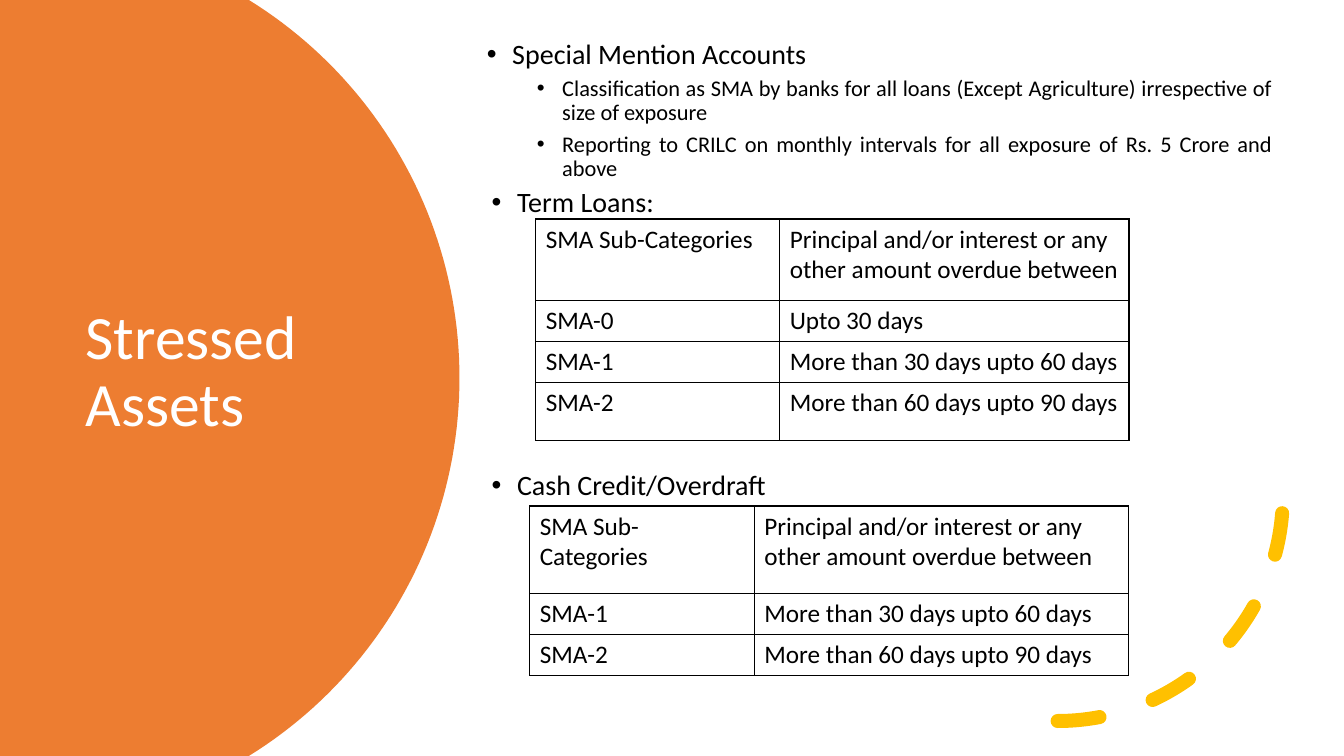
import math

import lxml.etree
import pptx
import pptx.dml.color
import pptx.enum.dml
import pptx.enum.shapes
import pptx.enum.text
import pptx.oxml.ns
import pptx.util

Cm, Pt, qn = pptx.util.Cm, pptx.util.Pt, pptx.oxml.ns.qn

COLOURS = {"orange": "ED7D31", "gold": "FFC000", "black": "000000", "white": "FFFFFF"}
WIDTH, HEIGHT = 33.87, 19.05


def colour(name):
    return pptx.dml.color.RGBColor.from_string(COLOURS[name])


class SlideBuilder:
    font = "Calibri"

    def __init__(self, presentation):
        self.slide = presentation.slides.add_slide(presentation.slide_layouts[5])

    def style(self, paragraph, size, colour_name="black"):
        paragraph.font.name = self.font
        paragraph.font.size = Pt(size)
        paragraph.font.color.rgb = colour(colour_name)

    def title(self, text, left, top, width, height):
        shape = self.slide.shapes.title
        shape.left, shape.top, shape.width, shape.height = map(Cm, (left, top, width, height))
        frame = shape.text_frame
        frame.text = text
        frame.word_wrap = True
        frame.auto_size = pptx.enum.text.MSO_AUTO_SIZE.NONE
        frame.vertical_anchor = pptx.enum.text.MSO_ANCHOR.MIDDLE
        paragraph = frame.paragraphs[0]
        paragraph.alignment = pptx.enum.text.PP_ALIGN.LEFT
        paragraph.line_spacing = 0.9
        self.style(paragraph, 44, "white")

    def circle_segment(self, centre_x, radius, steps=90):
        """Fill the area between the left slide edge and a circle, behind the title."""
        centre_y = HEIGHT / 2
        limit = math.asin(centre_y / radius)
        angles = [limit * (2 * step / steps - 1) for step in range(steps + 1)]
        curve = [(centre_x + radius * math.cos(angle), centre_y + radius * math.sin(angle))
                 for angle in angles]
        builder = self.slide.shapes.build_freeform(0, 0, scale=Cm(1) / 1000)
        points = [(round(x * 1000), round(y * 1000)) for x, y in curve + [(0, HEIGHT)]]
        builder.add_line_segments(points, close=True)
        shape = builder.convert_to_shape()
        shape.shadow.inherit = False
        shape.fill.solid()
        shape.fill.fore_color.rgb = colour("orange")
        shape.line.fill.background()
        self.slide.shapes.title.element.addprevious(shape.element)

    def dashed_arc(self, left, top, size):
        shape = self.slide.shapes.add_shape(
            pptx.enum.shapes.MSO_SHAPE.ARC, Cm(left), Cm(top), Cm(size), Cm(size))
        shape.shadow.inherit = False
        shape.fill.background()
        shape.line.color.rgb = colour("gold")
        shape.line.width = Pt(10)
        shape.line.dash_style = pptx.enum.dml.MSO_LINE.DASH
        properties = shape.element.spPr
        properties.find(qn("a:xfrm")).set("flipV", "1")
        properties.find(qn("a:ln")).set("cap", "rnd")

    def bullets(self, items, left, top, width, height):
        """Each item is text, size, indent in cm, space before, justified."""
        frame = self.slide.shapes.add_textbox(Cm(left), Cm(top), Cm(width), Cm(height)).text_frame
        frame.word_wrap = True
        for index, (text, size, indent, space, justified) in enumerate(items):
            paragraph = frame.add_paragraph() if index else frame.paragraphs[0]
            paragraph.text = text
            paragraph.line_spacing = 0.9
            paragraph.space_before = Pt(space)
            if justified:
                paragraph.alignment = pptx.enum.text.PP_ALIGN.JUSTIFY
            self.style(paragraph, size)
            properties = paragraph._p.get_or_add_pPr()
            properties.set("marL", str(Cm(indent)))
            properties.set("indent", str(-Cm(0.64)))
            bullet_font = lxml.etree.Element(qn("a:buFont"), typeface="Arial")
            bullet = lxml.etree.Element(qn("a:buChar"), char="•")
            default_run = properties.find(qn("a:defRPr"))
            default_run.addprevious(bullet_font)
            default_run.addprevious(bullet)

    def table(self, rows, left, top, widths, heights):
        table = self.slide.shapes.add_table(
            len(rows), len(widths), Cm(left), Cm(top), Cm(sum(widths)), Cm(sum(heights))).table
        table.first_row = table.horz_banding = False
        for column, width in zip(table.columns, widths):
            column.width = Cm(width)
        for row, height, texts in zip(table.rows, heights, rows):
            row.height = Cm(height)
            for cell, text in zip(row.cells, texts):
                cell.text = text
                self.style(cell.text_frame.paragraphs[0], 18)
                self.borders(cell, "LRTB" if text else "T")
                cell.fill.background()

    def borders(self, cell, visible_sides):
        properties = cell._tc.get_or_add_tcPr()
        for side in "LRTB":
            line = lxml.etree.SubElement(properties, qn("a:ln" + side), w=str(Pt(1)))
            if side in visible_sides:
                fill = lxml.etree.SubElement(line, qn("a:solidFill"))
                lxml.etree.SubElement(fill, qn("a:srgbClr"), val=COLOURS["black"])
            else:
                lxml.etree.SubElement(line, qn("a:noFill"))


def main():
    presentation = pptx.Presentation()
    presentation.slide_width, presentation.slide_height = Cm(WIDTH), Cm(HEIGHT)
    builder = SlideBuilder(presentation)

    # Orange panel, title and decoration
    builder.circle_segment(centre_x=0.38, radius=11.2)
    builder.title("Stressed Assets", 1.9, 3.2, 8.9, 12.4)
    builder.dashed_arc(20.98, 6.82, 11.35)

    # Bullets, with room for the first table before the last one
    builder.bullets([
        ("Special Mention Accounts", 20, 0.64, 0, False),
        ("Classification as SMA by banks for all loans (Except Agriculture) "
         "irrespective of size of exposure", 16, 1.9, 5, True),
        ("Reporting to CRILC on monthly intervals for all exposure of "
         "Rs. 5 Crore and above", 16, 1.9, 5, True),
        ("Term Loans:", 20, 0.76, 5, True),
        ("Cash Credit/Overdraft", 20, 0.76, 180.5, False),
    ], 12.02, 0.89, 20.3, 12)

    # Overdue tables, the second one ending in an open row
    header = ("SMA Sub-Categories",
              "Principal and/or interest or any other amount overdue between")
    later_categories = [("SMA-1", "More than 30 days upto 60 days"),
                        ("SMA-2", "More than 60 days upto 90 days")]
    builder.table([header, ("SMA-0", "Upto 30 days"), *later_categories],
                  13.5, 5.52, (6.15, 8.8), (2.06, 1.03, 1.03, 1.45))
    builder.table([header, *later_categories, ("", "")],
                  13.35, 12.75, (5.66, 9.43), (2.21, 1.03, 1.03, 1.22))

    presentation.save("out.pptx")


if __name__ == "__main__":
    main()
